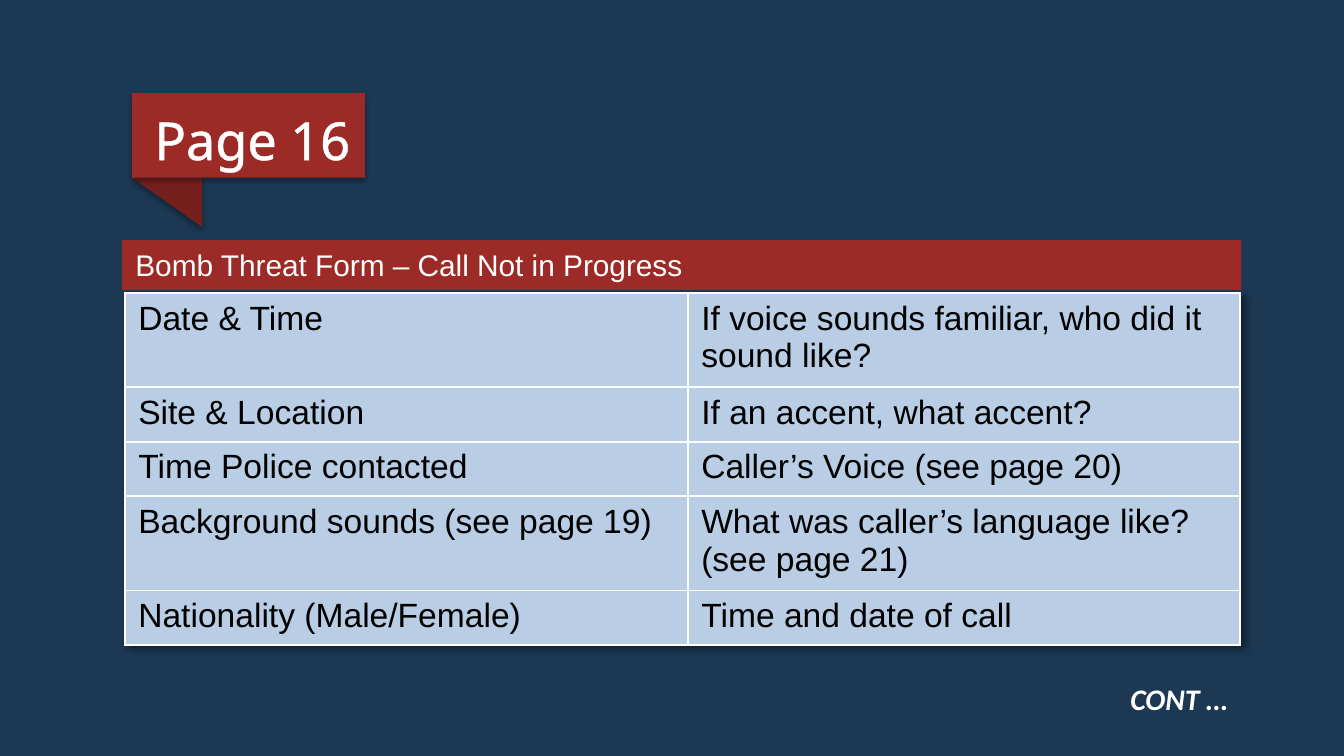
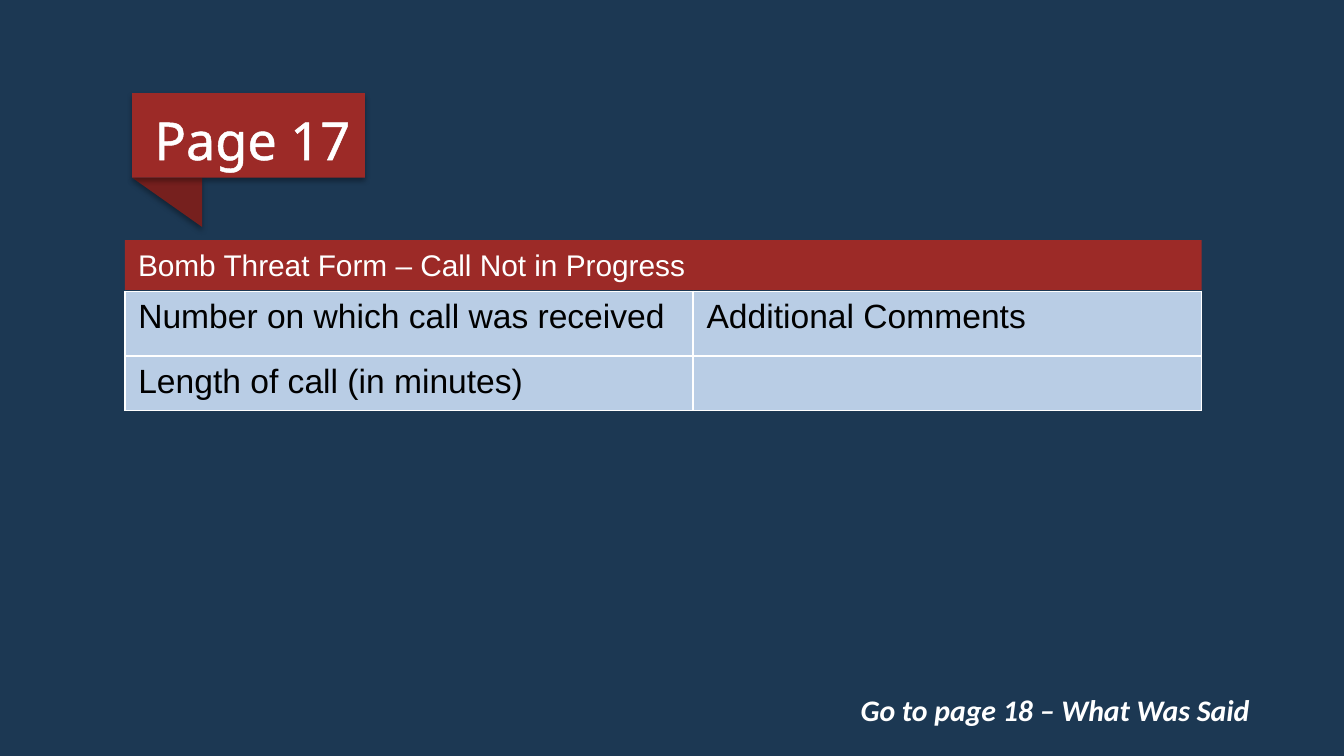
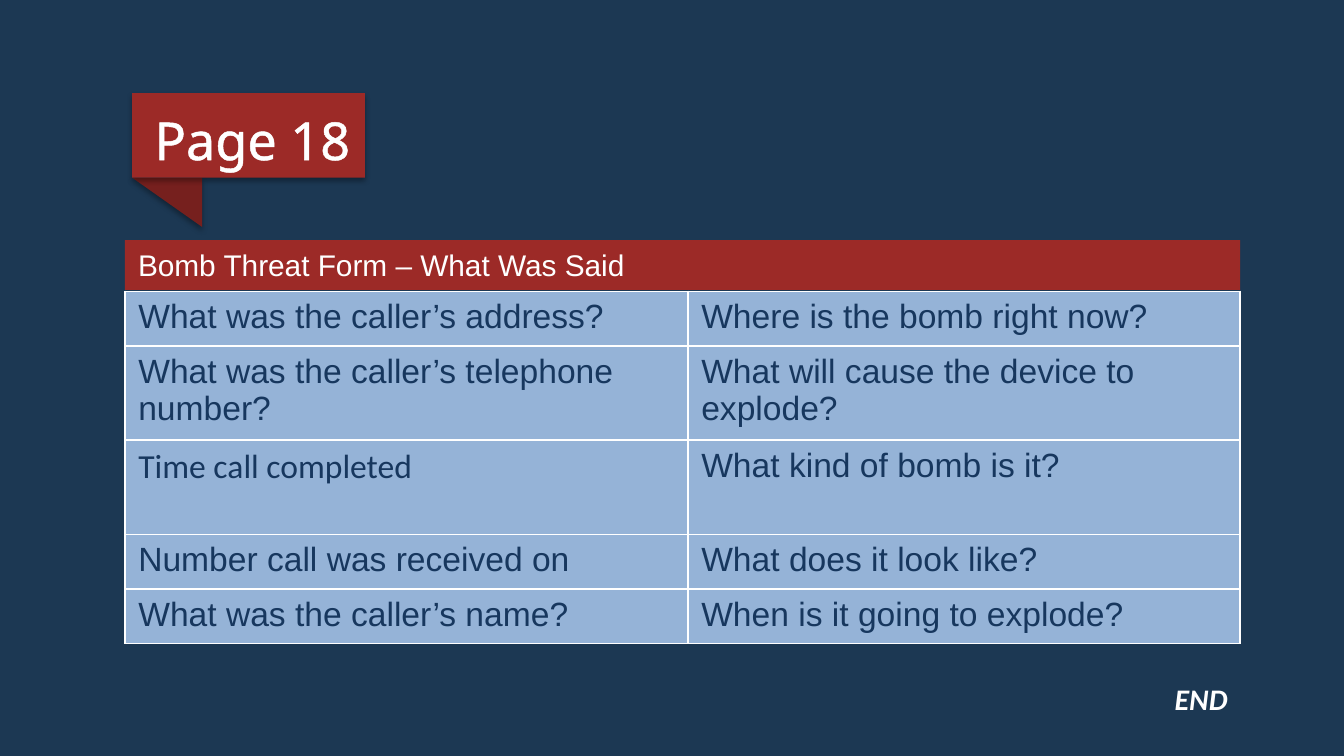
from dataclasses import dataclass

from lxml.etree import SubElement
from pptx import Presentation
from pptx.dml.color import RGBColor
from pptx.enum.shapes import MSO_SHAPE
from pptx.enum.text import MSO_ANCHOR, MSO_AUTO_SIZE, PP_ALIGN
from pptx.oxml.ns import qn
from pptx.util import Cm, Pt


@dataclass(frozen=True)
class Theme:
    background: str = "1C3853"
    ribbon: str = "9C2A27"
    ribbon_fold: str = "76201E"
    white: str = "FFFFFF"
    black: str = "000000"
    pale_blue: str = "B9CDE5"
    mid_blue: str = "95B3D7"
    navy: str = "17375E"
    tag_font: str = "Noto Sans"
    body_font: str = "Arial"
    note_font: str = "Calibri"
    tag_size: int = 28
    cell_size: int = 18
    small_size: int = 16


THEME = Theme()
SHORT_ROW = 1.03
MEDIUM_ROW = 1.22
TALL_ROW = 1.78


def add_solid_fill(parent, color):
    fill = SubElement(parent, qn("a:solidFill"))
    return SubElement(fill, qn("a:srgbClr"), val=color)


def add_shadow(parent, blur, distance, degrees, opacity):
    effects = SubElement(parent, qn("a:effectLst"))
    shadow = SubElement(
        effects, qn("a:outerShdw"), blurRad=str(Pt(blur)), dist=str(Pt(distance)),
        dir=str(degrees * 60000), algn="tl", rotWithShape="0",
    )
    color = SubElement(shadow, qn("a:srgbClr"), val=THEME.black)
    SubElement(color, qn("a:alpha"), val=str(opacity * 1000))
    return effects


def write_text(frame, text, *, font=THEME.body_font, size=THEME.small_size,
               color=THEME.white, bold=False, italic=False, outline=None,
               align=PP_ALIGN.LEFT, spacing=None):
    para = frame.paragraphs[0]
    para.alignment = align
    if spacing:
        para.line_spacing = spacing
    span = para.add_run()
    span.text = text
    span.font.name = font
    span.font.size = Pt(size)
    span.font.bold = bold
    span.font.italic = italic
    span.font.color.rgb = RGBColor.from_string(color)
    if outline:
        properties = span.font._element
        line = SubElement(properties, qn("a:ln"), w=str(Pt(1)))
        add_solid_fill(line, outline)
        properties.insert(0, line)


class FormDeck:
    def __init__(self, theme):
        self.theme = theme
        self.deck = Presentation()
        self.deck.slide_width = Cm(25.4)
        self.deck.slide_height = Cm(14.29)
        self.page = None

    def new_page(self):
        self.page = self.deck.slides.add_slide(self.deck.slide_layouts[6])
        fill = self.page.background.fill
        fill.solid()
        fill.fore_color.rgb = RGBColor.from_string(self.theme.background)

    def shape(self, parent, kind, left, top, width, height, color):
        shape = parent.shapes.add_shape(
            kind, Cm(left), Cm(top), Cm(width), Cm(height))
        shape.shadow.inherit = False
        shape.fill.solid()
        shape.fill.fore_color.rgb = RGBColor.from_string(color)
        shape.line.fill.background()
        return shape

    def text_box(self, text, left, top, width, height, **style):
        box = self.page.shapes.add_textbox(
            Cm(left), Cm(top), Cm(width), Cm(height))
        box.text_frame.word_wrap = True
        box.text_frame.auto_size = MSO_AUTO_SIZE.SHAPE_TO_FIT_TEXT
        write_text(box.text_frame, text, **style)

    def page_tag(self, text, width=4.24):
        theme = self.theme
        group = self.page.shapes.add_group_shape()
        fold = self.shape(group, MSO_SHAPE.RIGHT_TRIANGLE,
                          2.5, 3.36, 1.32, 0.93, theme.ribbon_fold)
        fold.rotation = 180
        ribbon = self.shape(group, MSO_SHAPE.RECTANGLE,
                            2.5, 1.76, 4.4, 1.6, theme.ribbon)
        for part in (fold, ribbon):
            properties = part._element.spPr
            properties.remove(properties.find(qn("a:effectLst")))
            add_shadow(properties, 3.1, 1.8, 90, 35)
        self.text_box(text, 2.67, 1.32, width, 1.96, font=theme.tag_font,
                      size=theme.tag_size, outline=theme.white, spacing=1.5)

    def band(self, text, left=2.36, width=21.08):
        band = self.shape(self.page, MSO_SHAPE.RECTANGLE,
                          left, 4.54, width, 0.94, self.theme.ribbon)
        band.text_frame.vertical_anchor = MSO_ANCHOR.MIDDLE
        write_text(band.text_frame, text)

    def table(self, rows, heights, columns=(10.64, 10.44), top=5.51,
              fill=THEME.pale_blue, color=THEME.black, fonts=None, shadow=False):
        fonts = fonts or {}
        table = self.page.shapes.add_table(
            len(rows), len(columns), Cm(2.36), Cm(top),
            Cm(sum(columns)), Cm(sum(heights))).table
        table.first_row = False
        table.horz_banding = False
        for column, width in zip(table.columns, columns):
            column.width = Cm(width)
        for row, height, texts in zip(table.rows, heights, rows):
            row.height = Cm(height)
            for cell, text in zip(row.cells, texts):
                self.style_cell(cell, fill)
                if text:
                    write_text(cell.text_frame, text, color=color,
                               size=self.theme.cell_size,
                               font=fonts.get(text, self.theme.body_font))
        if shadow:
            properties = table._tbl.tblPr
            properties.insert(0, add_shadow(properties, 4, 3, 45, 40))

    def style_cell(self, cell, fill):
        properties = cell._tc.get_or_add_tcPr()
        for side in ("a:lnL", "a:lnR", "a:lnT", "a:lnB"):
            border = SubElement(properties, qn(side), w=str(Pt(1)))
            add_solid_fill(border, self.theme.white)
        add_solid_fill(properties, fill)

    def footer(self, text, left=2.5, top=12.75):
        self.text_box(text, left, top, 20.95, 0.94, font=self.theme.note_font,
                      bold=True, italic=True, align=PP_ALIGN.RIGHT)

    def save(self):
        self.deck.save("out.pptx")


def main():
    form = FormDeck(THEME)

    form.new_page()
    form.page_tag("Page 16")
    form.band("Bomb Threat Form – Call Not in Progress", left=2.31, width=21.15)
    form.table(
        [
            ("Date & Time", "If voice sounds familiar, who did it sound like?"),
            ("Site & Location", "If an accent, what accent?"),
            ("Time Police contacted", "Caller’s Voice (see page 20)"),
            ("Background sounds (see page 19)",
             "What was caller’s language like? (see page 21)"),
            ("Nationality (Male/Female)", "Time and date of call"),
        ],
        (TALL_ROW, SHORT_ROW, SHORT_ROW, TALL_ROW, SHORT_ROW),
        top=5.54, shadow=True,
    )
    form.footer("CONT …")

    form.new_page()
    form.page_tag("Page 17", width=9.86)
    form.band("Bomb Threat Form – Call Not in Progress", width=20.35)
    form.table(
        [
            ("Number on which call was received", "Additional Comments"),
            ("Length of call (in minutes)", ""),
        ],
        (MEDIUM_ROW, SHORT_ROW), columns=(10.74, 9.61),
    )
    form.footer("Go to page 18 – What Was Said", left=2.92, top=12.95)

    form.new_page()
    form.page_tag("Page 18")
    form.band("Bomb Threat Form – What Was Said")
    form.table(
        [
            ("What was the caller’s address?", "Where is the bomb right now?"),
            ("What was the caller’s telephone number?",
             "What will cause the device to explode?"),
            ("Time call completed", "What kind of bomb is it?"),
            ("Number call was received on", "What does it look like?"),
            ("What was the caller’s name?", "When is it going to explode?"),
        ],
        (SHORT_ROW, TALL_ROW, TALL_ROW, SHORT_ROW, SHORT_ROW),
        fill=THEME.mid_blue, color=THEME.navy,
        fonts={"Time call completed": THEME.note_font},
    )
    form.footer("END")

    form.save()


if __name__ == "__main__":
    main()
